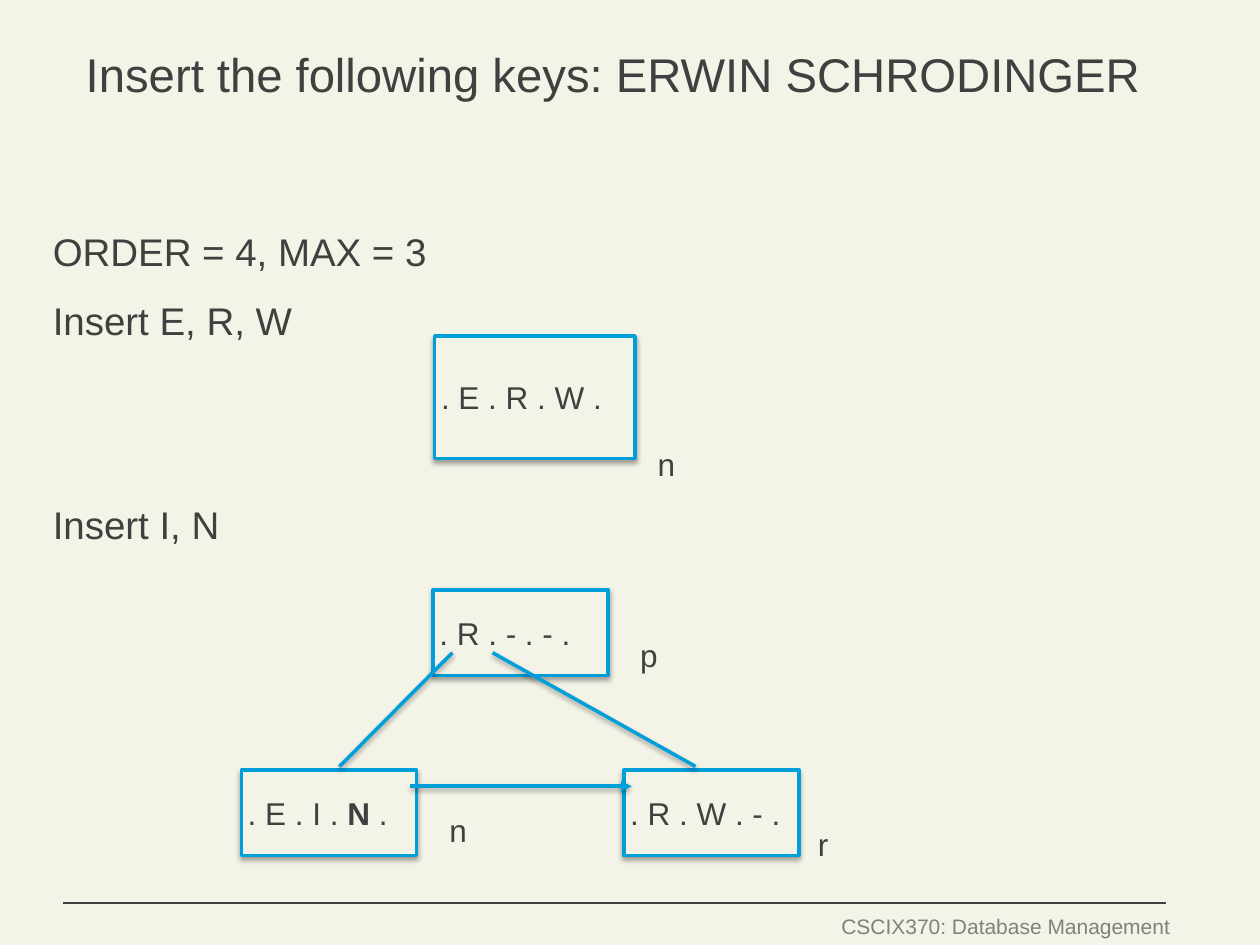
from lxml.etree import SubElement
from pptx import Presentation
from pptx.dml.color import RGBColor
from pptx.enum.shapes import MSO_CONNECTOR, MSO_SHAPE
from pptx.enum.text import MSO_ANCHOR, PP_ALIGN
from pptx.oxml import parse_xml
from pptx.oxml.ns import nsdecls, qn
from pptx.util import Pt

CREAM = RGBColor(0xF3, 0xF3, 0xE7)
DARK = RGBColor(0x40, 0x40, 0x40)
GREY = RGBColor(0x80, 0x80, 0x80)
BLUE = RGBColor(0x00, 0x9F, 0xDA)
INSET = 3.6
LEAF_SIZE = (100, 49)


def write(box, paragraphs, size=18, color=DARK, align=PP_ALIGN.LEFT,
          anchor=MSO_ANCHOR.TOP, wrap=True, gaps=()):
    """Fill a box; each paragraph is a list of (text, bold) spans."""
    frame = box.text_frame
    frame.word_wrap = wrap
    frame.vertical_anchor = anchor
    frame.margin_left = frame.margin_right = Pt(INSET)
    frame.margin_top = frame.margin_bottom = Pt(INSET)
    for index, spans in enumerate(paragraphs):
        para = frame.add_paragraph() if index else frame.paragraphs[0]
        para.alignment = align
        if index and gaps:
            para.space_before = Pt(gaps[index - 1])
        for text, bold in spans:
            span = para.add_run()
            span.text = text
            span.font.name = "Arial"
            span.font.size = Pt(size)
            span.font.bold = bold
            span.font.color.rgb = color


def add_text(page, left, top, width, height, *lines, **style):
    box = page.shapes.add_textbox(Pt(left), Pt(top), Pt(width), Pt(height))
    write(box, [[(line, False)] for line in lines], **style)


def add_soft_shadow(shape):
    shape._element.spPr.append(parse_xml(
        f'<a:effectLst {nsdecls("a")}>'
        '<a:outerShdw blurRad="38100" dist="22860" dir="5400000" rotWithShape="0">'
        '<a:srgbClr val="000000"><a:alpha val="35000"/></a:srgbClr>'
        '</a:outerShdw></a:effectLst>'))


def add_node(page, left, top, width, height, *spans):
    node = page.shapes.add_shape(
        MSO_SHAPE.RECTANGLE, Pt(left), Pt(top), Pt(width), Pt(height))
    node.fill.solid()
    node.fill.fore_color.rgb = CREAM
    node.line.color.rgb = BLUE
    node.line.width = Pt(2)
    add_soft_shadow(node)
    write(node, [spans], anchor=MSO_ANCHOR.MIDDLE)


def add_label(page, left, top, letter):
    add_text(page, left, top, 18, 27.4, letter, wrap=False)


def add_line(page, start, end, color=BLUE, width=2, shadow=True, arrow=False):
    line = page.shapes.add_connector(
        MSO_CONNECTOR.STRAIGHT, *(Pt(value) for value in (*start, *end)))
    line.line.color.rgb = color
    line.line.width = Pt(width)
    if arrow:
        SubElement(line.line._get_or_add_ln(), qn("a:tailEnd"), type="triangle")
    if shadow:
        add_soft_shadow(line)
    else:
        SubElement(line._element.spPr, qn("a:effectLst"))


def add_footer(page, left, top, width):
    add_line(page, (left, top), (left + width, top),
             color=DARK, width=0.75, shadow=False)
    add_text(page, left + 440, top + 2.2, 196.5, 21, "CSCIX370: Database Management",
             size=12, color=GREY, align=PP_ALIGN.RIGHT, wrap=False)


def add_single_node(page, left, top, width, height):
    add_node(page, left, top, width, height, (". E . R . W .", False))
    add_label(page, left + width + 9.3, top + height - 11.5, "n")


def add_split_tree(page, left, top, width, height):
    """Root centred above two linked leaves."""
    node_width, node_height = LEAF_SIZE
    root_left = left + 109.5
    leaf_top = top + height - node_height
    right_leaf = left + width - node_width

    # Nodes
    add_node(page, left, leaf_top, *LEAF_SIZE,
             (". E . I . ", False), ("N", True), (" .", False))
    add_node(page, right_leaf, leaf_top, *LEAF_SIZE, (". R . W . - .", False))
    add_node(page, root_left, top, *LEAF_SIZE, (". R . - . - .", False))

    # Child pointers and leaf link
    pointer_top, pointer_end = top + 36, leaf_top - 2
    add_line(page, (left + 56, pointer_end), (root_left + 11, pointer_top))
    add_line(page, (right_leaf + 41, pointer_end), (root_left + 34, pointer_top))
    add_line(page, (left + 96.5, leaf_top + 9.3),
             (right_leaf + 4.5, leaf_top + 9.3), arrow=True)

    # Node names
    add_label(page, left + node_width + 15.2, leaf_top + 20, "n")
    add_label(page, right_leaf + node_width + 7.2, leaf_top + 28, "r")
    add_label(page, root_left + node_width + 14.7, top + 23, "p")


def main():
    deck = Presentation()
    deck.slide_width, deck.slide_height = Pt(720), Pt(540)
    page = deck.slides.add_slide(deck.slide_layouts[6])
    page.background.fill.solid()
    page.background.fill.fore_color.rgb = CREAM

    add_footer(page, 36, 516, 630)
    # Title and steps
    add_text(page, 45.4, 22.3, 671.8, 80.6,
             "Insert the following keys: ERWIN SCHRODINGER", size=27)
    add_text(page, 26.6, 126.7, 618.5, 372.2,
             "ORDER = 4, MAX = 3", "Insert E, R, W", "Insert I, N",
             size=22, gaps=(13, 90))
    # Tree after each step
    add_single_node(page, 248.4, 192, 114.5, 70)
    add_split_tree(page, 138, 337, 318.5, 152)

    deck.save("out.pptx")


if __name__ == "__main__":
    main()
